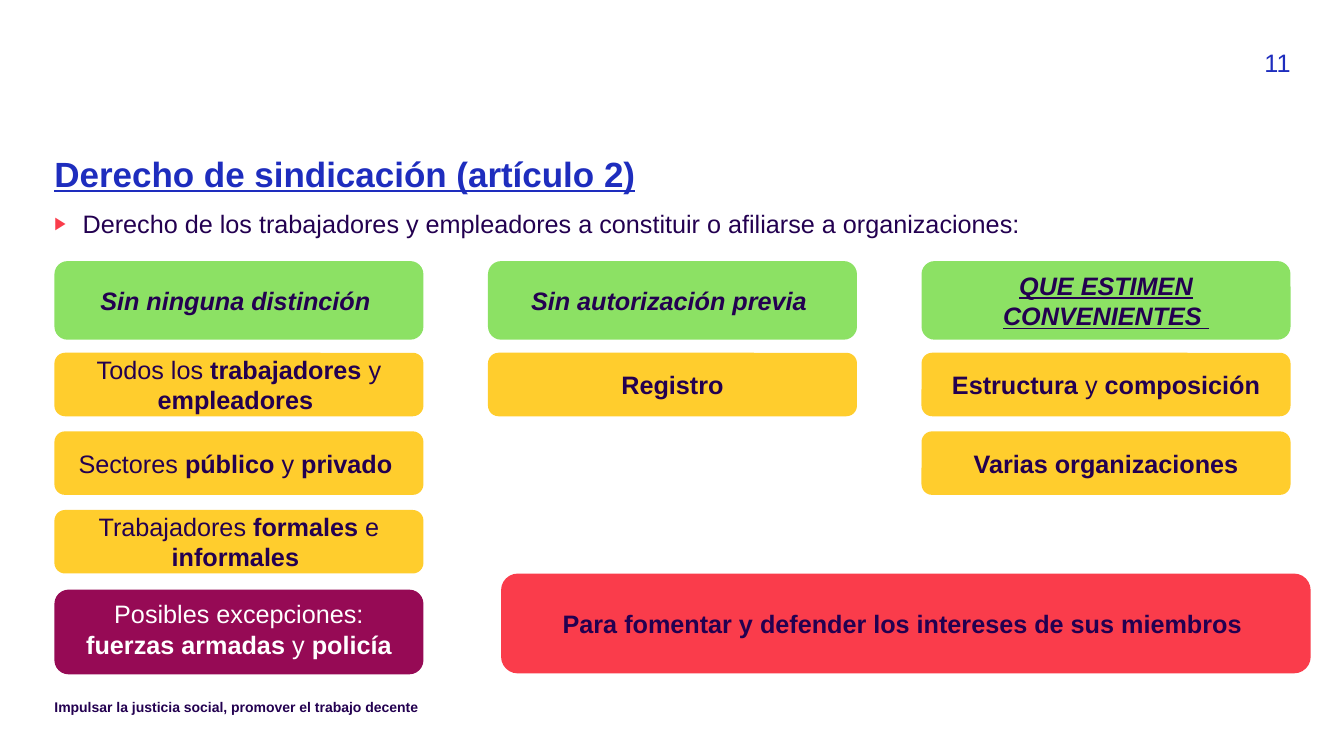
from lxml import etree
from pptx import Presentation
from pptx.dml.color import RGBColor
from pptx.enum.shapes import MSO_SHAPE as Shape
from pptx.enum.text import MSO_ANCHOR as Anchor, PP_ALIGN as Align
from pptx.oxml.ns import qn
from pptx.util import Inches, Pt

INK, BLUE, RED = "230050", "1E2DBE", "FA3C4B"
GREEN, YELLOW, PURPLE, WHITE = "8CE164", "FFCD2D", "960A55", "FFFFFF"
LEFT, COLUMN_STEP, COLUMN_WIDTH = 0.54, 4.3, 3.66
HEADER_TOP, HEADER_HEIGHT = 2.59, 0.78
FIRST_CARD, CARD_STEP, CARD_HEIGHT = 3.5, 0.78, 0.63

COLUMNS = [
    ("Sin ninguna distinción ", False, [
        "Todos los **trabajadores** y **empleadores ",
        "Sectores **público** y **privado ",
        "Trabajadores **formales** e **informales ",
    ]),
    ("Sin autorización previa ", False, ["**Registro"]),
    ("QUE ESTIMEN CONVENIENTES ", True, [
        "**Estructura** y **composición",
        "**Varias organizaciones",
    ]),
]


def color(value):
    """Turn a hex string into a colour."""
    return RGBColor.from_string(value)


def write(frame, text, size=18, ink=INK, italic=False, underline=False,
          align=Align.LEFT, anchor=Anchor.TOP, spacing=None):
    """Fill a text frame; double asterisks switch bold on and off."""
    frame.word_wrap = True
    frame.vertical_anchor = anchor
    for index, line in enumerate(text.split("\n")):
        paragraph = frame.add_paragraph() if index else frame.paragraphs[0]
        paragraph.alignment = align
        if spacing:
            paragraph.line_spacing = spacing
        for part, words in enumerate(line.split("**")):
            if not words:
                continue
            run = paragraph.add_run()
            run.text = words
            font = run.font
            font.name, font.size = "Arial", Pt(size)
            font.bold, font.italic = part % 2 == 1, italic
            font.underline = underline
            font.color.rgb = color(ink)


def add_label(slide, box, text, **form):
    """Add a text box without margins."""
    frame = slide.shapes.add_textbox(*map(Inches, box)).text_frame
    frame.margin_left = frame.margin_right = 0
    frame.margin_top = frame.margin_bottom = 0
    write(frame, text, **form)
    return frame


def add_card(slide, box, fill, text, anchor=Anchor.MIDDLE, **form):
    """Add a rounded card with centred text."""
    shape = slide.shapes.add_shape(Shape.ROUNDED_RECTANGLE, *map(Inches, box))
    shape.shadow.inherit = False
    shape.fill.solid()
    shape.fill.fore_color.rgb = color(fill)
    shape.line.fill.background()
    write(shape.text_frame, text, align=Align.CENTER, anchor=anchor, **form)


def add_bullet(paragraph, mark, ink, percent, indent):
    """Give a paragraph a coloured bullet with a hanging indent."""
    properties = paragraph._p.get_or_add_pPr()
    properties.set("marL", str(Inches(indent)))
    properties.set("indent", str(-Inches(indent)))
    tint = etree.SubElement(properties, qn("a:buClr"))
    etree.SubElement(tint, qn("a:srgbClr"), val=ink)
    etree.SubElement(properties, qn("a:buSzPct"), val=str(percent * 1000))
    etree.SubElement(properties, qn("a:buFont"), typeface="Arial")
    etree.SubElement(properties, qn("a:buChar"), char=mark)


def add_heading(slide):
    """Place the page number, title and introduction."""
    add_label(slide, (12.21, 0.47, 0.59, 0.31), "11", ink=BLUE, align=Align.RIGHT)
    add_label(slide, (LEFT, 1.56, 12.26, 0.5),
              "**Derecho de sindicación (artículo 2)",
              size=25, ink=BLUE, underline=True, spacing=0.9)
    intro = add_label(slide, (LEFT, 2.07, 10.8, 0.51),
                      "Derecho de los trabajadores y empleadores a constituir "
                      "o afiliarse a organizaciones:")
    add_bullet(intro.paragraphs[0], "▶", RED, 70, 0.28)


def add_column(slide, left, header, underline, cards):
    """Place a green header with its yellow cards below."""
    add_card(slide, (left, HEADER_TOP, COLUMN_WIDTH, HEADER_HEIGHT), GREEN,
             "**" + header, italic=True, underline=underline)
    for row, text in enumerate(cards):
        top = FIRST_CARD + row * CARD_STEP
        add_card(slide, (left, top, COLUMN_WIDTH, CARD_HEIGHT), YELLOW, text)


def add_closing(slide):
    """Place the exceptions, the purpose and the footer."""
    add_card(slide, (LEFT, 5.85, COLUMN_WIDTH, 0.84), PURPLE,
             "Posibles excepciones:\n**fuerzas armadas **y **policía",
             ink=WHITE, anchor=Anchor.TOP)
    add_card(slide, (4.97, 5.69, 8.03, 0.99), RED,
             "**Para fomentar y defender los intereses de sus miembros ")
    add_label(slide, (LEFT, 6.93, 6.13, 0.2),
              "**Impulsar la justicia social, promover el trabajo decente", size=10)


def main():
    """Build and save the slide."""
    presentation = Presentation()
    presentation.slide_width = Inches(13.33)
    presentation.slide_height = Inches(7.5)
    slide = presentation.slides.add_slide(presentation.slide_layouts[6])
    add_heading(slide)
    for index, column in enumerate(COLUMNS):
        add_column(slide, LEFT + index * COLUMN_STEP, *column)
    add_closing(slide)
    presentation.save("out.pptx")


if __name__ == "__main__":
    main()
